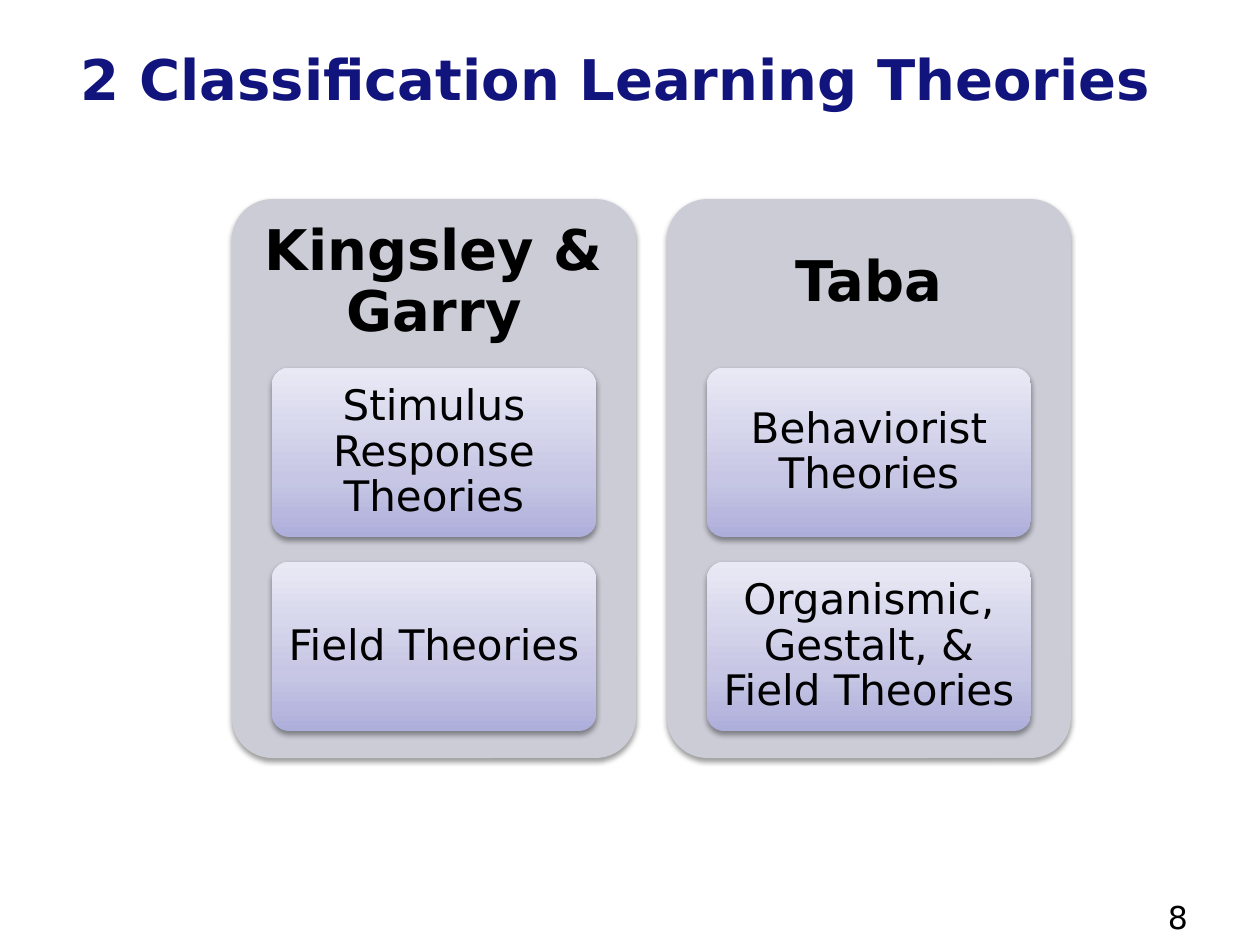
"""Build the slide that groups learning theories by author."""
import copy
from dataclasses import dataclass

import lxml.etree
import pptx
import pptx.dml.color
import pptx.enum.shapes
import pptx.enum.text
import pptx.oxml.ns
import pptx.util

PX = 914400 / 126
FONT = "DejaVu Sans"
COLORS = {
    "title": "11147D",
    "text": "000000",
    "panel": "CCCCD7",
    "tile_bottom": "AEAEDB",
    "tile_middle": "C7C7E5",
    "tile_top": "E9E9F5",
    "shadow": "000000",
}
TILE_STOPS = ((0, "tile_bottom"), (0.35, "tile_middle"), (1, "tile_top"))
PANEL_LEFT, PANEL_TOP, PANEL_WIDTH, PANEL_HEIGHT = 232, 199, 404, 559
PANEL_PITCH = 435
HEADING_HEIGHT = 168
TILE_INSET, TILE_HEIGHT, TILE_PITCH = 40, 169, 194


@dataclass(frozen=True)
class Box:
    left: int
    top: int
    width: int
    height: int

    def emu(self) -> list[int]:
        return [px(v) for v in (self.left, self.top, self.width, self.height)]


@dataclass(frozen=True)
class TextStyle:
    size: int
    color: str = "text"
    bold: bool = False
    centered: bool = True
    middle: bool = True
    spacing: float = 0.9
    inset_x: int = 13
    inset_y: int = 6
    indent: int = 0


@dataclass(frozen=True)
class Column:
    author: str
    theories: tuple[str, ...]


TITLE = TextStyle(32, "title", bold=True, centered=False, spacing=1, indent=26)
NUMBER = TextStyle(18, centered=False, middle=False, spacing=1)
HEADING = TextStyle(32, bold=True, inset_x=16, inset_y=16)
THEORY = TextStyle(24, inset_x=9)
COLUMNS = (
    Column("Kingsley & Garry", ("Stimulus Response Theories", "Field Theories")),
    Column("Taba", ("Behaviorist Theories", "Organismic, Gestalt, & Field Theories")),
)


def px(length: int) -> int:
    return round(length * PX)


def rgb(name: str) -> pptx.dml.color.RGBColor:
    return pptx.dml.color.RGBColor.from_string(COLORS[name])


def write(holder, words: str, style: TextStyle) -> None:
    frame = holder.text_frame
    frame.word_wrap = True
    frame.margin_left = frame.margin_right = px(style.inset_x)
    frame.margin_top = frame.margin_bottom = px(style.inset_y)
    anchors = pptx.enum.text.MSO_ANCHOR
    frame.vertical_anchor = anchors.MIDDLE if style.middle else anchors.TOP
    paragraph = frame.paragraphs[0]
    aligns = pptx.enum.text.PP_ALIGN
    paragraph.alignment = aligns.CENTER if style.centered else aligns.LEFT
    paragraph.line_spacing = style.spacing
    if style.indent:
        paragraph._p.get_or_add_pPr().set("marL", str(px(style.indent)))
    run = paragraph.add_run()
    run.text = words
    run.font.name = FONT
    run.font.size = pptx.util.Pt(style.size)
    run.font.bold = style.bold
    run.font.color.rgb = rgb(style.color)


def add_text(slide, box: Box, words: str, style: TextStyle) -> None:
    write(slide.shapes.add_textbox(*box.emu()), words, style)


def add_shadow(card) -> None:
    card.shadow.inherit = False
    qn = pptx.oxml.ns.qn
    effects = card._element.spPr.find(qn("a:effectLst"))
    shadow = lxml.etree.SubElement(
        effects, qn("a:outerShdw"), blurRad=str(pptx.util.Pt(3.1)),
        dist=str(pptx.util.Pt(1.6)), dir="5400000", rotWithShape="0")
    tint = lxml.etree.SubElement(shadow, qn("a:srgbClr"), val=COLORS["shadow"])
    lxml.etree.SubElement(tint, qn("a:alpha"), val="38000")


def add_card(slide, box: Box):
    card = slide.shapes.add_shape(
        pptx.enum.shapes.MSO_SHAPE.ROUNDED_RECTANGLE, *box.emu())
    card.adjustments[0] = 0.1
    card.line.fill.background()
    add_shadow(card)
    return card


def add_panel(slide, box: Box) -> None:
    panel = add_card(slide, box)
    panel.fill.solid()
    panel.fill.fore_color.rgb = rgb("panel")


def add_tile(slide, box: Box, theory: str) -> None:
    tile = add_card(slide, box)
    tile.fill.gradient()
    tile.fill.gradient_angle = 90
    stops = tile._element.spPr.find(".//" + pptx.oxml.ns.qn("a:gsLst"))
    stops.append(copy.deepcopy(stops[0]))
    for stop, (position, color) in zip(tile.fill.gradient_stops, TILE_STOPS):
        stop.position = position
        stop.color.rgb = rgb(color)
    write(tile, theory, THEORY)


def add_column(slide, left: int, column: Column) -> None:
    add_panel(slide, Box(left, PANEL_TOP, PANEL_WIDTH, PANEL_HEIGHT))
    add_text(slide, Box(left, PANEL_TOP, PANEL_WIDTH, HEADING_HEIGHT),
             column.author, HEADING)
    for row, theory in enumerate(column.theories):
        top = PANEL_TOP + HEADING_HEIGHT + 1 + row * TILE_PITCH
        add_tile(slide, Box(left + TILE_INSET, top,
                            PANEL_WIDTH - 2 * TILE_INSET, TILE_HEIGHT), theory)


def main() -> None:
    deck = pptx.Presentation()
    deck.slide_width, deck.slide_height = px(1260), px(945)
    slide = deck.slides.add_slide(deck.slide_layouts[6])
    add_text(slide, Box(42, 10, 1197, 136), "2 Classification Learning Theories", TITLE)
    add_text(slide, Box(1155, 892, 105, 34), "8", NUMBER)
    for index, column in enumerate(COLUMNS):
        add_column(slide, PANEL_LEFT + index * PANEL_PITCH, column)
    deck.save("out.pptx")


if __name__ == "__main__":
    main()
